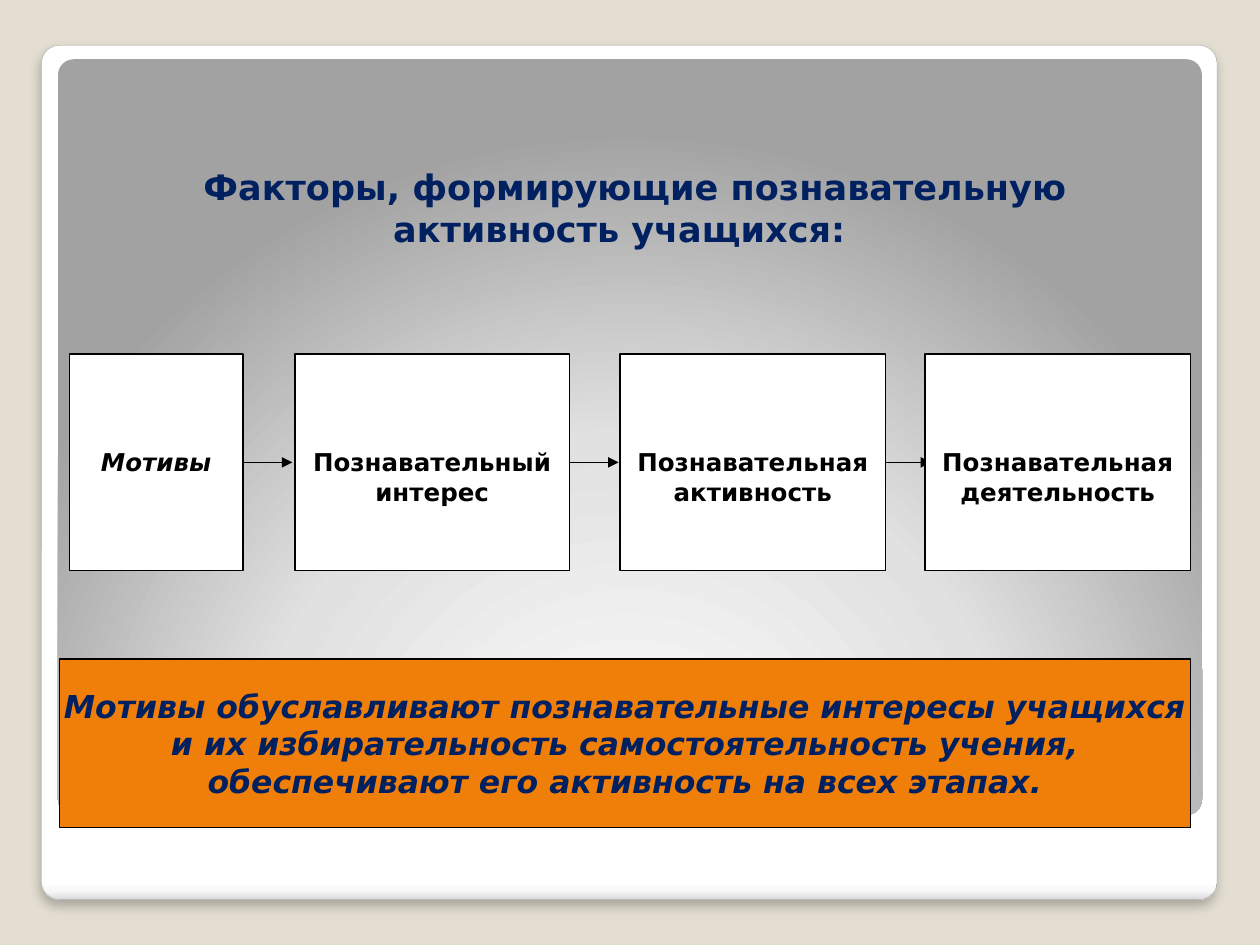
from lxml import etree
from pptx import Presentation
from pptx.dml.color import RGBColor
from pptx.enum.shapes import MSO_CONNECTOR, MSO_SHAPE
from pptx.enum.text import MSO_ANCHOR, PP_ALIGN
from pptx.oxml import parse_xml
from pptx.oxml.ns import nsdecls, qn
from pptx.util import Inches, Pt

COLORS = {"background": "E3DED1", "frame_line": "A4A4A4", "navy": "002060",
          "black": "000000", "white": "FFFFFF", "orange": "F07F09"}

TITLE = "Факторы, формирующие познавательную активность учащихся:"
# Text, left, width, italic
STAGES = [
    ("Мотивы", 0.55, 1.38, True),
    ("Познавательный интерес", 2.34, 2.18, False),
    ("Познавательная активность", 4.92, 2.11, False),
    ("Познавательная деятельность", 7.34, 2.11, False),
]
STAGE_TOP, STAGE_HEIGHT = 2.81, 1.72
ARROWS = [(1.8, 2.32), (4.22, 4.91), (6.87, 7.39)]
CONCLUSION = ("Мотивы обуславливают познавательные интересы учащихся\v"
              "и их избирательность самостоятельность учения,\n"
              "обеспечивают его активность на всех этапах.")

# Box, gradient stops (percent, colour), gradient direction
FRAME = ((0.33, 0.36, 9.33, 6.78),
         [(0, "FFFFFF"), (98, "FFFFFF"), (99, "F7F7F7"), (100, "DADADA")],
         '<a:lin ang="5400000" scaled="0"/>')
PANEL = ((0.46, 0.47, 9.08, 6),
         [(0, "FFFFFF"), (55, "E1E1E1"), (100, "A2A2A2")],
         '<a:path path="circle"><a:fillToRect l="50000" t="175000" '
         'r="50000" b="-75000"/></a:path>')


def rgb(name):
    return RGBColor.from_string(COLORS[name])


def add_panel(slide, box, stops, direction):
    panel = slide.shapes.add_shape(MSO_SHAPE.ROUNDED_RECTANGLE, *map(Inches, box))
    panel.adjustments[0] = 0.021
    panel.shadow.inherit = False
    panel.line.fill.background()
    stop_xml = "".join(f'<a:gs pos="{pos * 1000}"><a:srgbClr val="{color}"/></a:gs>'
                       for pos, color in stops)
    properties = panel.element.spPr
    properties.find(qn("a:prstGeom")).addnext(parse_xml(
        f'<a:gradFill {nsdecls("a")} rotWithShape="1"><a:gsLst>{stop_xml}</a:gsLst>'
        f'{direction}</a:gradFill>'))
    return panel


def add_card(slide, box, fill):
    card = slide.shapes.add_shape(MSO_SHAPE.RECTANGLE, *map(Inches, box))
    card.shadow.inherit = False
    card.fill.solid()
    card.fill.fore_color.rgb = rgb(fill)
    card.line.color.rgb = rgb("black")
    card.line.width = Pt(0.75)
    return card


def write(frame, text, color, font, layout):
    for key, value in layout.items():
        setattr(frame, key, value)
    frame.text = text
    for paragraph in frame.paragraphs:
        paragraph.alignment = PP_ALIGN.CENTER
        for run in paragraph.runs:
            run.font.color.rgb = rgb(color)
            for key, value in ({"name": "DejaVu Sans", "bold": True} | font).items():
                setattr(run.font, key, value)


def add_arrow(slide, start, end, y):
    arrow = slide.shapes.add_connector(
        MSO_CONNECTOR.STRAIGHT, Inches(start), Inches(y), Inches(end), Inches(y))
    arrow.line.color.rgb = rgb("black")
    arrow.line.width = Pt(0.75)
    etree.SubElement(arrow.line._get_or_add_ln(), qn("a:tailEnd"), type="triangle")
    etree.SubElement(arrow._element.spPr, qn("a:effectLst"))


def main():
    deck = Presentation()
    deck.slide_width, deck.slide_height = Inches(10), Inches(7.5)
    slide = deck.slides.add_slide(deck.slide_layouts[6])
    slide.background.fill.solid()
    slide.background.fill.fore_color.rgb = rgb("background")

    # Frame with soft shadow, then the inner panel
    frame = add_panel(slide, *FRAME)
    frame.line.color.rgb = rgb("frame_line")
    frame.line.width = Pt(0.16)
    frame.element.spPr.find(qn("a:effectLst")).append(parse_xml(
        f'<a:outerShdw {nsdecls("a")} blurRad="{Pt(6)}" dist="{Pt(4)}" dir="5400000" '
        'algn="t" rotWithShape="0"><a:srgbClr val="000000"><a:alpha val="25000"/>'
        '</a:srgbClr></a:outerShdw>'))
    add_panel(slide, *PANEL)

    # Title with a first-line indent
    title = slide.shapes.add_textbox(*map(Inches, (0.62, 1.25, 8.59, 1.11))).text_frame
    write(title, TITLE, "navy", {"size": Pt(20)},
          {"word_wrap": True, "vertical_anchor": MSO_ANCHOR.MIDDLE,
           "margin_bottom": Inches(0.37)})
    title.paragraphs[0]._p.get_or_add_pPr().set("indent", str(Inches(0.25)))

    # Chain of stages; the boxes cover the arrow ends
    for start, end in ARROWS:
        add_arrow(slide, start, end, STAGE_TOP + STAGE_HEIGHT / 2)
    for text, left, width, italic in STAGES:
        stage = add_card(slide, (left, STAGE_TOP, width, STAGE_HEIGHT), "white")
        write(stage.text_frame, text, "black", {"size": Pt(14), "italic": italic},
              {"word_wrap": True, "vertical_anchor": MSO_ANCHOR.TOP,
               "margin_top": Inches(0.74)})

    # Conclusion
    conclusion = add_card(slide, (0.47, 5.23, 8.98, 1.34), "orange")
    write(conclusion.text_frame, CONCLUSION, "navy", {"size": Pt(18), "italic": True},
          {"word_wrap": False, "vertical_anchor": MSO_ANCHOR.MIDDLE})

    deck.save("out.pptx")


if __name__ == "__main__":
    main()
